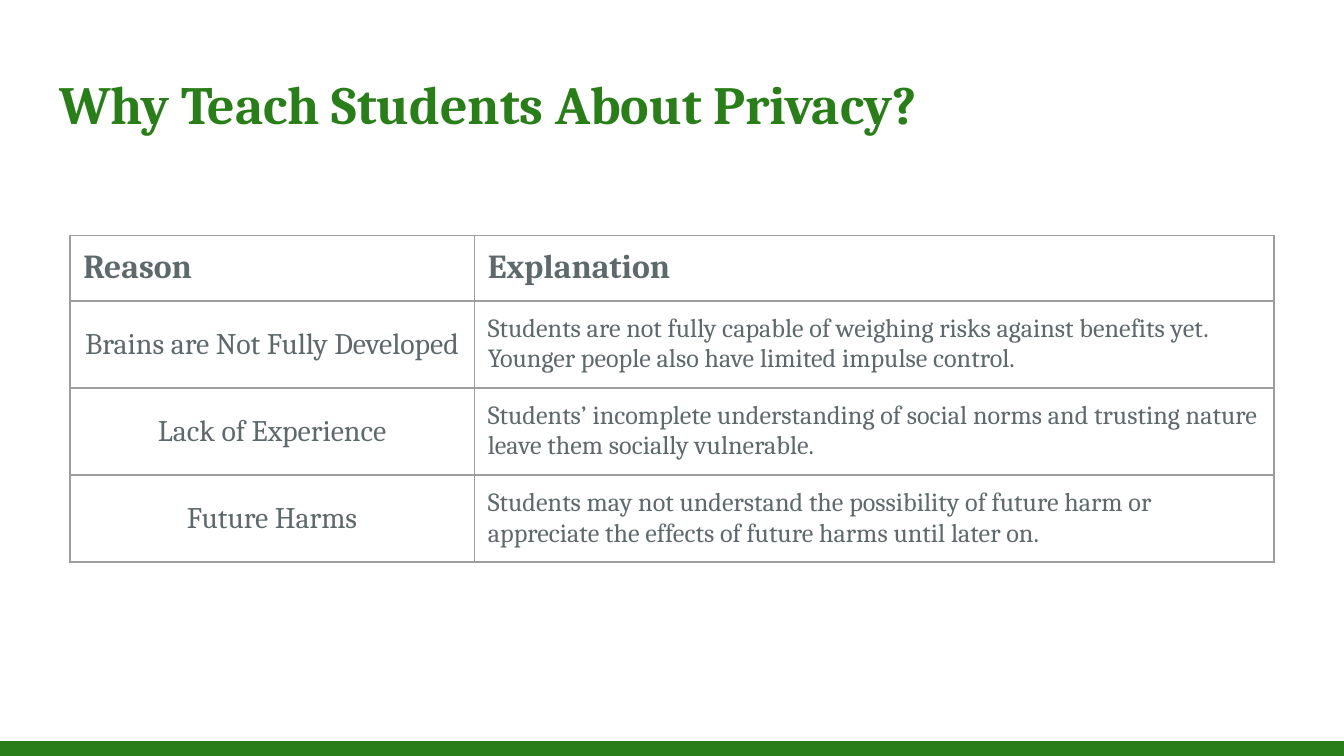
from pptx import Presentation
from pptx.dml.color import RGBColor
from pptx.enum import shapes, text
from pptx.oxml import parse_xml
from pptx.oxml.ns import nsdecls
from pptx.util import Inches, Pt

# Content
TITLE = "Why Teach Students About Privacy?"
ROWS = [
    ("Reason", "Explanation"),
    ("Brains are Not Fully Developed",
     "Students are not fully capable of weighing risks against benefits yet. "
     "Younger people also have limited impulse control."),
    ("Lack of Experience",
     "Students’ incomplete understanding of social norms and trusting nature "
     "leave them socially vulnerable."),
    ("Future Harms",
     "Students may not understand the possibility of future harm or "
     "appreciate the effects of future harms until later on."),
]

# Look
GREEN = RGBColor(0x2A, 0x7E, 0x19)
SLATE = RGBColor(0x5E, 0x69, 0x6C)
RULE = RGBColor(0x9E, 0x9E, 0x9E)
WIDTHS = (3.01, 5.95)
HEIGHT = 0.48  # least row height; rows grow to fit their text
HEAD = {"size": Pt(18), "bold": True}
BODY = ({"size": Pt(16), "bold": False}, {"size": Pt(14), "bold": False})
ANCHORS = (text.MSO_ANCHOR.MIDDLE, text.MSO_ANCHOR.TOP)
SIDES = ("left", "right", "top", "bottom")


def style(para, color, look):
    for run in para.runs:
        run.font.name = "Cambria"
        run.font.color.rgb = color
        for key, value in look.items():
            setattr(run.font, key, value)


def pad(box):
    for side in SIDES:
        setattr(box, f"margin_{side}", Inches(0.1))


def border(cell):
    props = cell._tc.get_or_add_tcPr()
    for at, side in enumerate("LRTB"):
        props.insert(at, parse_xml(
            f'<a:ln{side} {nsdecls("a")} w="{Pt(0.75)}"><a:solidFill>'
            f'<a:srgbClr val="{RULE}"/></a:solidFill></a:ln{side}>'))


# A 16:9 slide
deck = Presentation()
deck.slide_width = Inches(10)
deck.slide_height = deck.slide_width * 9 // 16
slide = deck.slides.add_slide(deck.slide_layouts[5])

# Footer bar
thick = Inches(0.11)
bar = slide.shapes.add_shape(shapes.MSO_SHAPE.RECTANGLE, 0,
                             deck.slide_height - thick,
                             deck.slide_width, thick)
bar.shadow.inherit = False
bar.fill.solid()
bar.fill.fore_color.rgb = GREEN
bar.line.fill.background()

# Title
title = slide.shapes.title
title.left, title.top = Inches(0.34), Inches(0.43)
title.width, title.height = Inches(9.32), Inches(0.68)
frame = title.text_frame
frame.text = TITLE
frame.vertical_anchor = text.MSO_ANCHOR.MIDDLE
frame.auto_size = text.MSO_AUTO_SIZE.NONE
pad(frame)
frame.paragraphs[0].alignment = text.PP_ALIGN.LEFT
style(frame.paragraphs[0], GREEN, {"size": Pt(28.8), "bold": True})

# Table of reasons
table = slide.shapes.add_table(
    len(ROWS), len(WIDTHS), Inches(0.52), Inches(1.75),
    Inches(sum(WIDTHS)), Inches(HEIGHT * len(ROWS))).table
table.horz_banding = False
for col, width in zip(table.columns, WIDTHS):
    col.width = Inches(width)
for r, row in enumerate(ROWS):
    for c, words in enumerate(row):
        cell = table.cell(r, c)
        cell.text = words
        cell.fill.background()
        cell.vertical_anchor = ANCHORS[c]
        pad(cell)
        border(cell)
        para = cell.text_frame.paragraphs[0]
        mid = r > 0 and c == 0
        para.alignment = text.PP_ALIGN.CENTER if mid else text.PP_ALIGN.LEFT
        style(para, SLATE, BODY[c] if r else HEAD)

deck.save("out.pptx")
